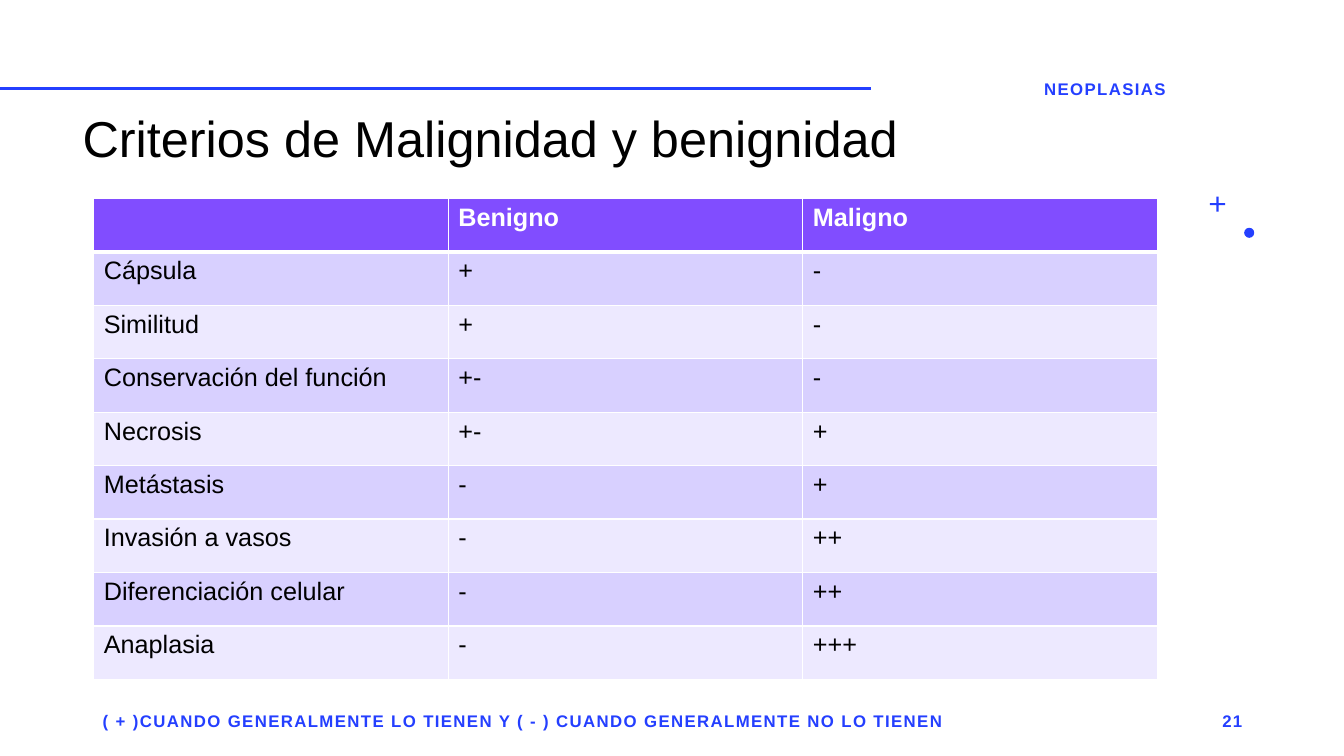
import pptx
import pptx.dml.color
import pptx.enum.shapes
import pptx.enum.text
import pptx.oxml
import pptx.oxml.ns
import pptx.util

Inches = pptx.util.Inches
Shape = pptx.enum.shapes.MSO_SHAPE
Align = pptx.enum.text.PP_ALIGN
Anchor = pptx.enum.text.MSO_ANCHOR
Color = pptx.dml.color.RGBColor.from_string


class Theme:
    font = "Arial"
    blue = "243FFF"
    black = "000000"
    white = "FFFFFF"
    head = "814DFF"
    bands = ("D8D0FF", "EDE9FF")
    title = 36
    body = 18
    note = 12


def write(para, text, size, color, bold=False):
    run = para.add_run()
    run.text = text
    run.font.name = Theme.font
    run.font.size = pptx.util.Pt(size)
    run.font.bold = bold
    run.font.color.rgb = Color(color)
    return run


def edge(cell, sides):
    """Draw white cell borders; sides maps L, R, T, B, in that order, to points."""
    props = cell._tc.get_or_add_tcPr()
    for spot, (side, width) in enumerate(sides.items()):
        props.insert(spot, pptx.oxml.parse_xml(
            f'<a:ln{side} {pptx.oxml.ns.nsdecls("a")} w="{pptx.util.Pt(width)}">'
            f'<a:solidFill><a:srgbClr val="{Theme.white}"/></a:solidFill></a:ln{side}>'))


deck = pptx.Presentation()
deck.slide_width = Inches(13.33)
deck.slide_height = Inches(7.5)
slide = deck.slides.add_slide(deck.slide_layouts[6])
shapes = slide.shapes

# Rule and ornaments
rule = shapes.add_connector(pptx.enum.shapes.MSO_CONNECTOR.STRAIGHT,
                            Inches(0), Inches(0.88), Inches(8.64), Inches(0.88))
rule.line.color.rgb = Color(Theme.blue)
rule.line.width = pptx.util.Pt(2)
rule._element.spPr.append(pptx.oxml.parse_xml(
    f'<a:effectLst {pptx.oxml.ns.nsdecls("a")}/>'))

dot = shapes.add_shape(Shape.OVAL, Inches(12.34), Inches(2.26), Inches(0.1), Inches(0.1))
plus = shapes.add_shape(Shape.CROSS, Inches(12), Inches(1.95), Inches(0.15), Inches(0.15))
plus.adjustments[0] = 0.43
for mark in (dot, plus):
    mark.shadow.inherit = False
    mark.fill.solid()
    mark.fill.fore_color.rgb = Color(Theme.blue)
    mark.line.fill.background()

# Title
title = shapes.add_textbox(Inches(0.72), Inches(0.43), Inches(11.28), Inches(1.29))
title.text_frame.word_wrap = True
title.text_frame.vertical_anchor = Anchor.BOTTOM
para = title.text_frame.paragraphs[0]
para.line_spacing = 0.9
write(para, "Criterios de Malignidad y benignidad", Theme.title, Theme.black)

# Criteria table
rows = [
    ("", "Benigno", "Maligno"),
    ("Cápsula", "+", "-"),
    ("Similitud", "+", "-"),
    ("Conservación del función", "+-", "-"),
    ("Necrosis", "+-", "+"),
    ("Metástasis", "-", "+"),
    ("Invasión a vasos", "-", "++"),
    ("Diferenciación celular", "-", "++"),
    ("Anaplasia", "-", "+++"),
]
table = shapes.add_table(len(rows), 3, Inches(0.93), Inches(1.97),
                         Inches(10.55), Inches(4.77)).table
for r, row in enumerate(rows):
    top = r == 0
    for c, text in enumerate(row):
        cell = table.cell(r, c)
        cell.fill.solid()
        cell.fill.fore_color.rgb = Color(Theme.head if top else Theme.bands[(r - 1) % 2])
        edge(cell, {"L": 1, "R": 1, "T": 3 if r == 1 else 1, "B": 3 if top else 1})
        if text:
            write(cell.text_frame.paragraphs[0], text, Theme.body,
                  Theme.white if top else Theme.black, bold=top)

# Section label, footer and page number
notes = [
    (0.92, 6.95, 9.94, Align.LEFT,
     "( + )CUANDO GENERALMENTE LO TIENEN Y ( - ) CUANDO GENERALMENTE NO LO TIENEN"),
    (8.71, 0.68, 4.5, Align.CENTER, "NEOPLASIAS"),
    (9.42, 6.95, 3, Align.RIGHT, "21"),
]
for left, top, width, align, text in notes:
    box = shapes.add_textbox(Inches(left), Inches(top), Inches(width), Inches(0.4))
    box.text_frame.word_wrap = True
    box.text_frame.vertical_anchor = Anchor.MIDDLE
    para = box.text_frame.paragraphs[0]
    para.alignment = align
    run = write(para, text, Theme.note, Theme.blue, bold=True)
    run._r.get_or_add_rPr().set("spc", "100")

deck.save("out.pptx")
